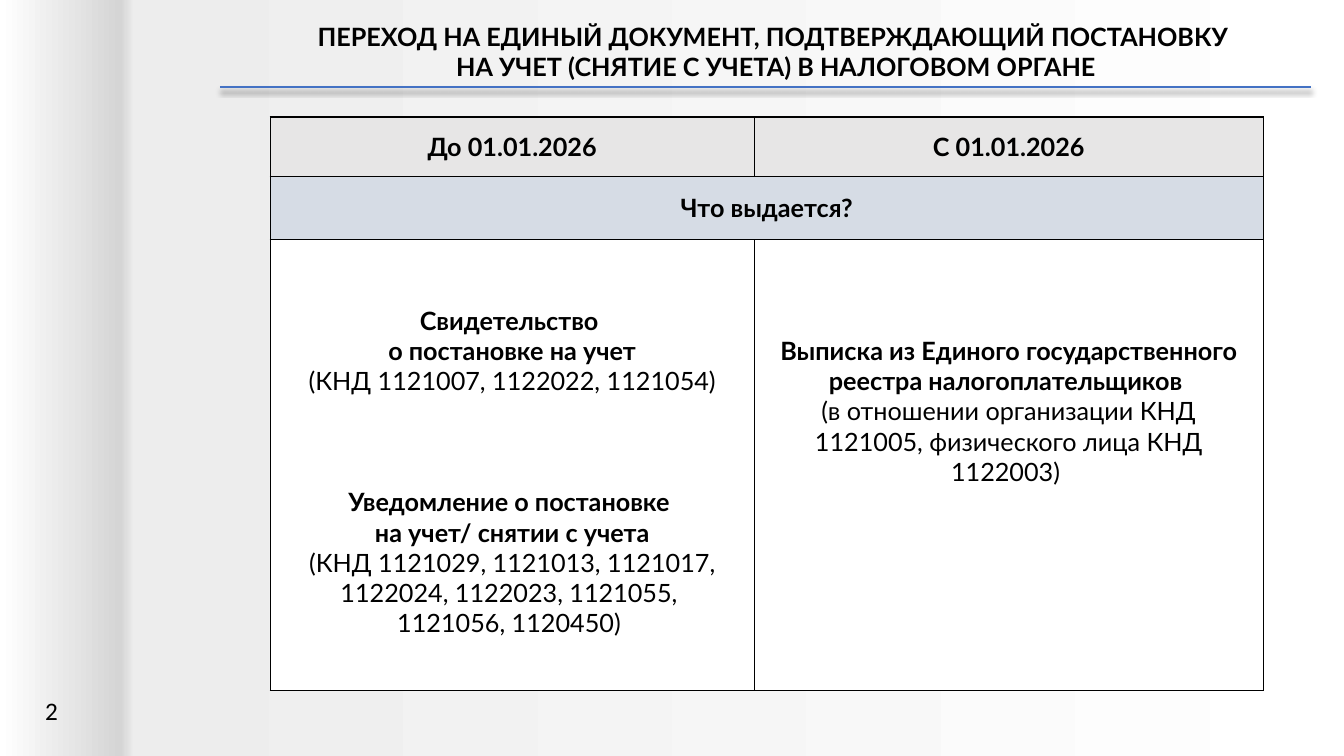
"""Build the slide on the single tax registration document."""
import itertools
from dataclasses import dataclass
from typing import Any

import pptx
import pptx.dml.color
import pptx.enum.shapes
import pptx.enum.text
import pptx.oxml
import pptx.oxml.ns
import pptx.util

Inches = pptx.util.Inches
Pt = pptx.util.Pt
CENTER = pptx.enum.text.PP_ALIGN.CENTER
LEFT = pptx.enum.text.PP_ALIGN.LEFT
TOP = pptx.enum.text.MSO_ANCHOR.TOP
MIDDLE = pptx.enum.text.MSO_ANCHOR.MIDDLE

COLORS: dict[str, str] = {
    "text": "000000", "border": "000000", "rule": "4472C4", "shadow": "000000",
    "header": "E7E6E6", "question": "D6DCE5", "answer": "FFFFFF",
    "white": "FFFFFF", "fold": "D5D5D5", "paper": "EDEDED",
}
NAMESPACE = pptx.oxml.ns.nsdecls("a")
COLUMN_WIDTHS = (4.8, 5.05)
ROW_HEIGHTS = (0.59, 0.63, 4.47)


@dataclass(frozen=True)
class Line:
    """One paragraph of text."""
    text: str
    bold: bool = True
    space_before: float = 0


@dataclass(frozen=True)
class CellSpec:
    """One table cell, with its place, fill and paragraphs."""
    row: int
    column: int
    fill: str
    lines: tuple[Line, ...]
    span: int = 1
    anchor: Any = MIDDLE
    margin_top: float = 0.05


TITLE = (
    Line("ПЕРЕХОД НА ЕДИНЫЙ ДОКУМЕНТ, ПОДТВЕРЖДАЮЩИЙ ПОСТАНОВКУ "),
    Line("НА УЧЕТ (СНЯТИЕ С УЧЕТА) В НАЛОГОВОМ ОРГАНЕ"),
)
BEFORE = (
    Line("Свидетельство "),
    Line("о постановке на учет"),
    Line("(КНД 1121007, 1122022, 1121054)", bold=False),
    Line("Уведомление о постановке ", space_before=65),
    Line("на учет/ снятии с учета"),
    Line("(КНД 1121029, 1121013, 1121017, 1122024, 1122023, 1121055, ", bold=False),
    Line("1121056, 1120450) ", bold=False),
)
AFTER = (
    Line("Выписка из Единого государственного реестра налогоплательщиков "),
    Line("(в отношении организации КНД 1121005, физического лица КНД 1122003) ", bold=False),
)
CELLS = (
    CellSpec(0, 0, "header", (Line("До 01.01.2026"),)),
    CellSpec(0, 1, "header", (Line("С 01.01.2026"),)),
    CellSpec(1, 0, "question", (Line("Что выдается?"),), span=2),
    CellSpec(2, 0, "answer", BEFORE, anchor=TOP, margin_top=0.65),
    CellSpec(2, 1, "answer", AFTER, anchor=TOP, margin_top=0.95),
)


def rgb(name: str) -> pptx.dml.color.RGBColor:
    """Return the named colour."""
    return pptx.dml.color.RGBColor.from_string(COLORS[name])


def write_lines(frame: Any, lines: tuple[Line, ...], *, font: str = "Lato",
                size: float = 18, color: str = "text", align: Any = CENTER) -> None:
    """Fill a text frame with formatted paragraphs."""
    for index, line in enumerate(lines):
        para = frame.paragraphs[0] if index == 0 else frame.add_paragraph()
        para.alignment = align
        para.space_before = Pt(line.space_before)
        span = para.add_run()
        span.text = line.text
        span.font.name = font
        span.font.size = Pt(size)
        span.font.bold = line.bold
        span.font.color.rgb = rgb(color)


def paint_background(page: Any) -> None:
    """Give the page its folded paper gradient."""
    fill = page.background.fill
    fill.gradient()
    fill.gradient_angle = 0
    stops = fill.gradient_stops
    stop_list = page.element.find(".//" + pptx.oxml.ns.qn("a:gsLst"))
    for stop in list(stop_list):
        stop_list.remove(stop)
    for place, name, alpha in ((0, "white", 100), (9, "fold", 71),
                               (10, "paper", 100), (100, "white", 100)):
        stop_list.append(pptx.oxml.parse_xml(
            f'<a:gs {NAMESPACE} pos="{place * 1000}"><a:srgbClr val="{COLORS[name]}">'
            f'<a:alpha val="{alpha * 1000}"/></a:srgbClr></a:gs>'))


def add_title(page: Any) -> None:
    """Place and write the title."""
    title = page.shapes.title
    title.left, title.top = Inches(2.69), Inches(0.16)
    title.width, title.height = Inches(10.01), Inches(0.71)
    frame = title.text_frame
    frame.auto_size = pptx.enum.text.MSO_AUTO_SIZE.NONE
    frame.vertical_anchor = TOP
    write_lines(frame, TITLE)


def add_rule(page: Any) -> None:
    """Draw the shadowed line under the title."""
    rule = page.shapes.add_connector(
        pptx.enum.shapes.MSO_CONNECTOR.STRAIGHT,
        Inches(2.18), Inches(0.86), Inches(13), Inches(0.86))
    rule.line.color.rgb = rgb("rule")
    rule.line.width = Pt(1.5)
    rule.element.spPr.append(pptx.oxml.parse_xml(
        f'<a:effectLst {NAMESPACE}><a:outerShdw blurRad="{Pt(4)}" dist="{Pt(3)}" '
        f'dir="5400000" rotWithShape="0"><a:srgbClr val="{COLORS["shadow"]}">'
        '<a:alpha val="40000"/></a:srgbClr></a:outerShdw></a:effectLst>'))


def add_page_number(page: Any) -> None:
    """Write the page number at the lower left."""
    box = page.shapes.add_textbox(Inches(0.35), Inches(6.85), Inches(0.33), Inches(0.4))
    box.text_frame.word_wrap = False
    write_lines(box.text_frame, (Line("2", bold=False),), font="Calibri", align=LEFT)


def add_borders(cell: Any) -> None:
    """Outline a cell on all four sides."""
    properties = cell._tc.get_or_add_tcPr()
    for side in ("lnL", "lnR", "lnT", "lnB"):
        properties.append(pptx.oxml.parse_xml(
            f'<a:{side} {NAMESPACE} w="{Pt(1)}"><a:solidFill>'
            f'<a:srgbClr val="{COLORS["border"]}"/></a:solidFill></a:{side}>'))


def add_comparison(page: Any) -> None:
    """Draw the table comparing the documents before and after."""
    table = page.shapes.add_table(
        len(ROW_HEIGHTS), len(COLUMN_WIDTHS), Inches(2.68), Inches(1.16),
        Inches(sum(COLUMN_WIDTHS)), Inches(sum(ROW_HEIGHTS))).table
    table.first_row = table.horz_banding = False
    for column, width in zip(table.columns, COLUMN_WIDTHS):
        column.width = Inches(width)
    for row, height in zip(table.rows, ROW_HEIGHTS):
        row.height = Inches(height)
    for place in itertools.product(range(len(ROW_HEIGHTS)), range(len(COLUMN_WIDTHS))):
        add_borders(table.cell(*place))
    for item in CELLS:
        cell = table.cell(item.row, item.column)
        if item.span > 1:
            cell.merge(table.cell(item.row, item.column + item.span - 1))
        cell.fill.solid()
        cell.fill.fore_color.rgb = rgb(item.fill)
        cell.vertical_anchor = item.anchor
        cell.margin_top = Inches(item.margin_top)
        write_lines(cell.text_frame, item.lines)


def main() -> None:
    """Build and save the deck."""
    deck = pptx.Presentation()
    deck.slide_width, deck.slide_height = Inches(13.33), Inches(7.5)
    page = deck.slides.add_slide(deck.slide_layouts.get_by_name("Title Only"))
    paint_background(page)
    add_title(page)
    add_rule(page)
    add_page_number(page)
    add_comparison(page)
    deck.save("out.pptx")


if __name__ == "__main__":
    main()
